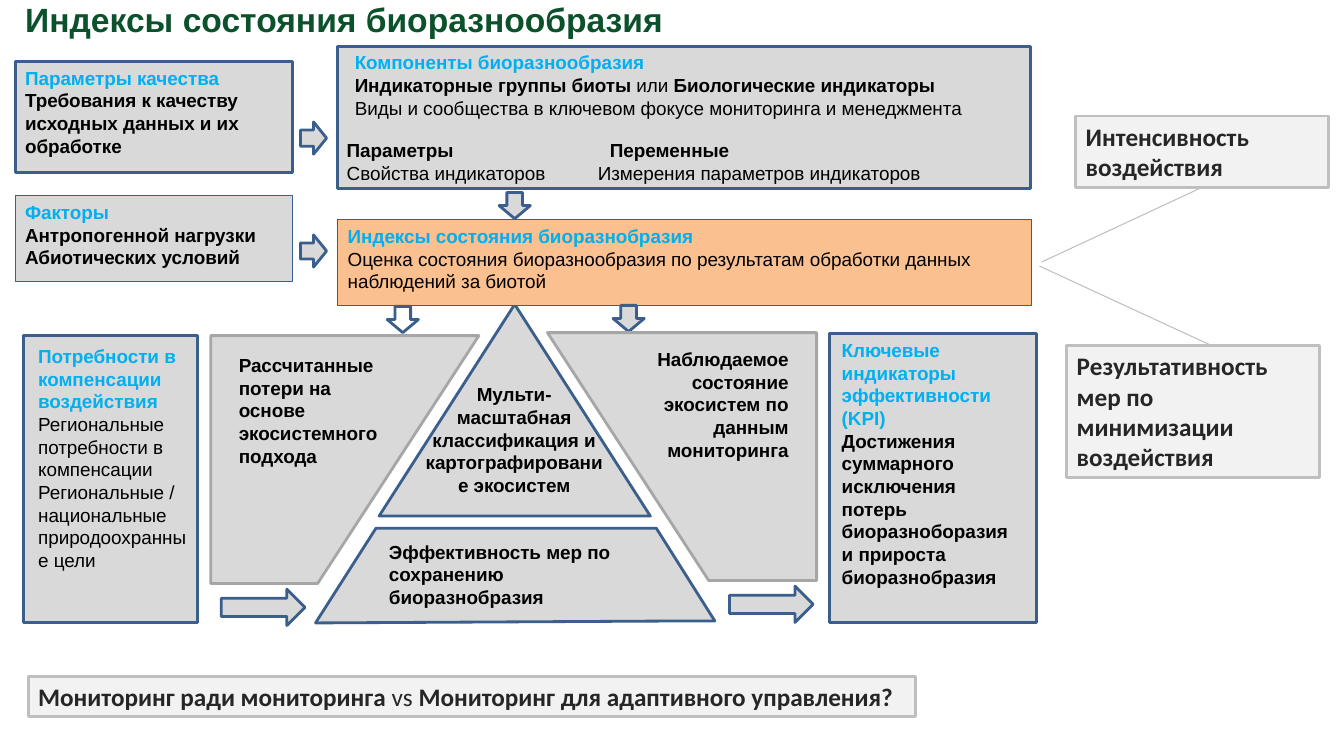
from dataclasses import dataclass
from typing import Optional

from lxml import etree
from pptx import Presentation
from pptx.dml.color import RGBColor
from pptx.enum.shapes import MSO_CONNECTOR, MSO_SHAPE as Shp
from pptx.enum.text import MSO_ANCHOR, MSO_AUTO_SIZE, PP_ALIGN as Al
from pptx.oxml.ns import qn
from pptx.util import Emu, Pt

PX = 9144  # one px is a hundredth of an inch
GREY, NAVY, SILVER = "D9D9D9", "3A5F8C", "BFBFBF"
HEAD = {"bold": True, "color": "00B0F0"}
BOLD = {"bold": True, "color": "000000"}
PLAIN = {"bold": False, "color": "000000"}
NOTE = {"bold": True, "color": "262626", "size": 18, "name": "Calibri"}
TITLE = {"bold": True, "color": "0B512B", "size": 24}

Run = tuple[str, dict]
Box = tuple[int, int, int, int]
Point = tuple[int, int]


@dataclass
class Para:
    runs: list[Run]
    tab: Optional[int] = None


@dataclass
class Block:
    at: Box
    kind: Shp = Shp.RECTANGLE
    fill: str = GREY
    line: str = NAVY
    width: float = 2
    rotation: int = 0
    paras: tuple[Para, ...] = ()


@dataclass
class Outline:
    points: list[Point]
    line: str


@dataclass
class Label:
    at: Box
    paras: tuple[Para, ...]
    align: Al = Al.LEFT


def para(text: str, style: dict, tab: Optional[int] = None) -> Para:
    return Para([(text, style)], tab)


def note(at: Box, *runs: Run) -> Block:
    return Block(at, fill="F2F2F2", line=SILVER, paras=(Para(list(runs)),))


def arrow(at: Box, rotation: int = 0, fill: str = GREY) -> Block:
    return Block(at, Shp.DOWN_ARROW, fill, rotation=rotation)


def rgb(value: str) -> RGBColor:
    return RGBColor.from_string(value)


def emu(lengths) -> list[Emu]:
    return [Emu(v * PX) for v in lengths]


def write(tf, paras: tuple[Para, ...], align: Al = Al.LEFT) -> None:
    frame = {"word_wrap": True, "auto_size": MSO_AUTO_SIZE.NONE, "vertical_anchor": MSO_ANCHOR.TOP}
    for name, value in frame.items():
        setattr(tf, name, value)
    for i, item in enumerate(paras):
        p = tf.paragraphs[0] if i == 0 else tf.add_paragraph()
        p.alignment = align
        if item.tab:
            tabs = etree.SubElement(p._p.get_or_add_pPr(), qn("a:tabLst"))
            etree.SubElement(tabs, qn("a:tab"), pos=str(item.tab * PX), algn="l")
        for text, style in item.runs:
            r = p.add_run()
            r.text = text
            fmt = {"name": "Arial", "size": 13.5} | style
            r.font.color.rgb = rgb(fmt.pop("color"))
            fmt["size"] = Pt(fmt["size"])
            for name, value in fmt.items():
                setattr(r.font, name, value)


def paint(sp, fill: str, line: str, width: float = 2) -> None:
    sp.shadow.inherit = False
    sp.fill.solid()
    sp.fill.fore_color.rgb = rgb(fill)
    sp.line.color.rgb = rgb(line)
    sp.line.width = Pt(width)


def add_block(s, block: Block) -> None:
    sp = s.shapes.add_shape(block.kind, *emu(block.at))
    paint(sp, block.fill, block.line, block.width)
    sp.rotation = block.rotation
    if block.paras:
        write(sp.text_frame, block.paras)


def add_outline(s, outline: Outline) -> None:
    start, *rest = outline.points
    builder = s.shapes.build_freeform(*start, scale=PX)
    builder.add_line_segments(rest, close=True)
    paint(builder.convert_to_shape(), GREY, outline.line)


def add_label(s, label: Label) -> None:
    write(s.shapes.add_textbox(*emu(label.at)).text_frame, label.paras, label.align)


def add_link(s, start: Point, end: Point) -> None:
    link = s.shapes.add_connector(MSO_CONNECTOR.STRAIGHT, *emu(start + end))
    link.line.color.rgb = rgb(SILVER)
    link.line.width = Pt(0.75)
    etree.SubElement(link._element.spPr, qn("a:effectLst"))


BLOCKS = [
    Block((376, 302, 269, 210), Shp.ISOSCELES_TRIANGLE),
    Block((335, 46, 687, 141)),
    Block((335, 218, 688, 85), fill="FAC090", line="376092", width=0.75, paras=(
        para("Индексы состояния биоразнобразия", HEAD),
        para("Оценка состояния биоразнообразия по результатам обработки данных наблюдений за биотой", PLAIN))),
    Block((15, 194, 275, 85), line="376092", width=0.75, paras=(
        para("Факторы", HEAD),
        para("Антропогенной нагрузки", BOLD),
        para("Абиотических условий", BOLD))),
    Block((15, 61, 275, 110), paras=(
        para("Параметры качества", HEAD),
        para("Требования к качеству исходных данных и их обработке", BOLD))),
    Block((23, 333, 173, 285)),
    Block((823, 331, 205, 287)),
    arrow((495, 191, 31, 26)),
    arrow((295, 124, 32, 26), 270),
    arrow((295, 236, 32, 26), 270),
    arrow((384, 304, 31, 26), fill="FFFFFF"),
    arrow((608, 303, 31, 26)),
    arrow((243, 561, 36, 83), 270),
    arrow((747, 558, 36, 83), 270),
    note((28, 671, 880, 40), ("Мониторинг ради мониторинга ", NOTE), ("vs ", NOTE | {"bold": False}),
         ("Мониторинг для адаптивного управления?", NOTE)),
    note((1067, 115, 251, 71), ("Интенсивность воздействия", NOTE)),
    note((1058, 343, 251, 131), ("Результативность мер по минимизации воздействия", NOTE)),
]

OUTLINES = [
    Outline([(475, 333), (315, 579), (209, 579), (209, 333)], "A6A6A6"),
    Outline([(373, 524), (651, 524), (709, 616), (686, 616), (313, 618)], NAVY),
    Outline([(543, 330), (703, 576), (810, 576), (810, 330)], "A6A6A6"),
]

LABELS = [
    Label((342, 45, 332, 36), (para("Компоненты биоразнообразия", HEAD),)),
    Label((342, 68, 661, 56), (
        Para([("Индикаторные группы биоты ", BOLD), ("или", PLAIN), (" Биологические индикаторы", BOLD)]),
        para("Виды и сообщества в ключевом фокусе мониторинга и менеджмента", PLAIN))),
    Label((334, 133, 661, 60), (
        para("Параметры\tПеременные", BOLD, 261),
        para("Свойства индикаторов\tИзмерения параметров индикаторов", PLAIN, 249))),
    Label((412, 375, 196, 135), (
        para("Мульти-", BOLD),
        para("масштабная классификация и картографирование экосистем", BOLD)), Al.CENTER),
    Label((227, 346, 173, 135), (para("Рассчитанные потери на основе экосистемного подхода", BOLD),)),
    Label((619, 340, 173, 135), (
        para("Наблюдаемое", BOLD),
        para("состояние экосистем по данным мониторинга", BOLD)), Al.RIGHT),
    Label((825, 331, 198, 283), (
        para("Ключевые индикаторы эффективности (KPI)", HEAD),
        para("Достижения суммарного исключения потерь биоразноборазия и прироста биоразнобразия", BOLD))),
    Label((28, 337, 171, 258), (
        para("Потребности в компенсации воздействия", HEAD),
        para("Региональные потребности в компенсации", PLAIN),
        para("Региональные / национальные природоохранные цели", PLAIN))),
    Label((376, 531, 276, 85), (
        para("Эффективность мер по", BOLD),
        para("сохранению биоразнобразия", BOLD))),
]

LINKS = [((1192, 186), (1033, 260)), ((1202, 343), (1031, 264))]


def main() -> None:
    prs = Presentation()
    prs.slide_width, prs.slide_height = emu((1333, 750))
    s = prs.slides.add_slide(prs.slide_layouts[5])
    title = s.shapes.title
    title.left, title.top, title.width, title.height = emu((15, -6, 1160, 50))
    write(title.text_frame, (para("Индексы состояния биоразнообразия", TITLE),))
    for block in BLOCKS:
        add_block(s, block)
    for outline in OUTLINES:
        add_outline(s, outline)
    for label in LABELS:
        add_label(s, label)
    for start, end in LINKS:
        add_link(s, start, end)
    prs.save("out.pptx")


if __name__ == "__main__":
    main()
